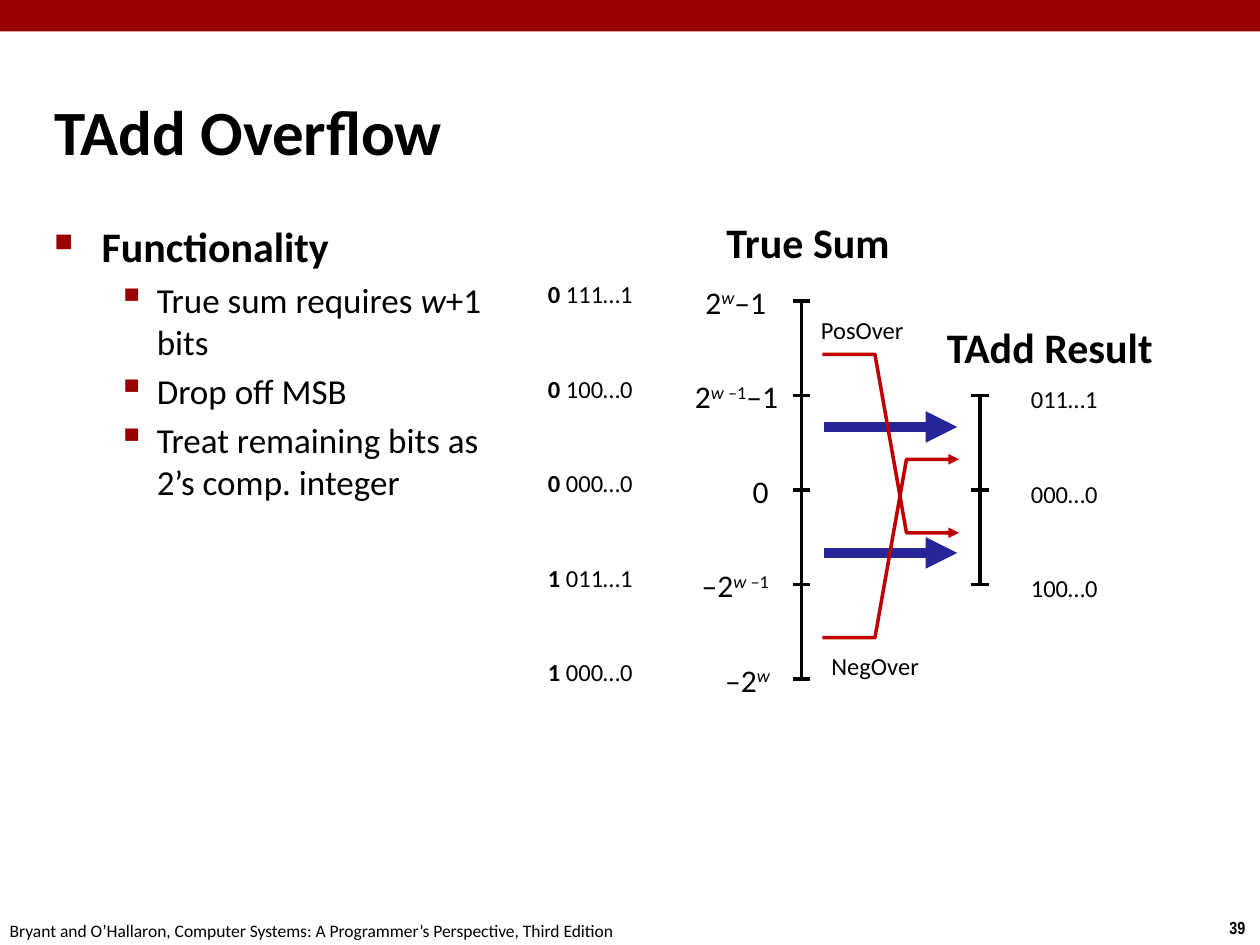
import pptx
import pptx.dml.color
import pptx.enum.shapes
import pptx.enum.text
import pptx.oxml.ns
import pptx.util
from lxml import etree

Pt = pptx.util.Pt
Align = pptx.enum.text.PP_ALIGN
Anchor = pptx.enum.text.MSO_ANCHOR

COLORS = {"black": "000000", "band": "990000", "blue": "262699", "red": "C00000"}


def add_xml(parent, tag, **attributes):
    return etree.SubElement(parent, pptx.oxml.ns.qn(tag), attributes)


class SlideBuilder:
    font = "Calibri"

    def __init__(self, slide):
        self.slide = slide

    def color(self, name):
        return pptx.dml.color.RGBColor.from_string(COLORS[name])

    def band(self, left, top, width, height):
        shape = self.slide.shapes.add_shape(
            pptx.enum.shapes.MSO_SHAPE.RECTANGLE, Pt(left), Pt(top), Pt(width), Pt(height))
        shape.shadow.inherit = False
        shape.fill.solid()
        shape.fill.fore_color.rgb = self.color("band")
        shape.line.fill.background()

    def add_runs(self, paragraph, runs, size, font=None):
        """Each run is (text, flags): b bold, i italic, ^ superscript."""
        for text, flags in runs:
            run = paragraph.add_run()
            run.text = text
            run.font.name = font or self.font
            run.font.size = Pt(size)
            run.font.bold = "b" in flags
            run.font.italic = "i" in flags
            run.font.color.rgb = self.color("black")
            if "^" in flags:
                run._r.get_or_add_rPr().set("baseline", "30000")

    def text_box(self, left, top, width, height, wrap=False):
        box = self.slide.shapes.add_textbox(Pt(left), Pt(top), Pt(width), Pt(height))
        frame = box.text_frame
        frame.word_wrap = wrap
        if not wrap:
            frame.auto_size = pptx.enum.text.MSO_AUTO_SIZE.SHAPE_TO_FIT_TEXT
        return frame

    def text(self, left, top, width, height, runs, size, align=Align.LEFT,
             wrap=False, anchor=Anchor.TOP, font=None):
        frame = self.text_box(left, top, width, height, wrap)
        frame.vertical_anchor = anchor
        paragraph = frame.paragraphs[0]
        paragraph.alignment = align
        self.add_runs(paragraph, runs, size, font)

    def bullets(self, left, top, width, height, items):
        frame = self.text_box(left, top, width, height, wrap=True)
        styles = [(24, 27, 27, "■", 60), (20, 58.5, 22.5, "▪", 110)]
        for index, (level, runs) in enumerate(items):
            size, margin, hanging, mark, percent = styles[level]
            paragraph = frame.paragraphs[0] if index == 0 else frame.add_paragraph()
            paragraph.level = level
            paragraph.space_before = Pt(size * 0.2)
            properties = paragraph._p.get_or_add_pPr()
            properties.set("marL", str(Pt(margin)))
            properties.set("indent", str(-Pt(hanging)))
            bullet_color = add_xml(properties, "a:buClr")
            add_xml(bullet_color, "a:srgbClr", val=COLORS["band"])
            add_xml(properties, "a:buSzPct", val=str(percent * 1000))
            add_xml(properties, "a:buChar", char=mark)
            self.add_runs(paragraph, runs, size)

    def style_line(self, shape, color, width, arrow):
        shape.line.color.rgb = self.color(color)
        shape.line.width = Pt(width)
        if arrow:
            add_xml(shape.line._get_or_add_ln(), "a:tailEnd", type="triangle")

    def line(self, x1, y1, x2, y2, color="black", width=2, arrow=False):
        connector = self.slide.shapes.add_connector(
            pptx.enum.shapes.MSO_CONNECTOR.STRAIGHT, Pt(x1), Pt(y1), Pt(x2), Pt(y2))
        self.style_line(connector, color, width, arrow)
        add_xml(connector._element.spPr, "a:effectLst")

    def bent_arrow(self, points, color):
        start, *others = [(Pt(x), Pt(y)) for x, y in points]
        builder = self.slide.shapes.build_freeform(*start)
        builder.add_line_segments(others, close=False)
        shape = builder.convert_to_shape()
        shape.shadow.inherit = False
        shape.fill.background()
        self.style_line(shape, color, 2, arrow=True)

    def axis(self, x, ticks):
        top, middle, bottom = ticks[0], ticks[len(ticks) // 2], ticks[-1]
        for start, end in ((top, middle), (middle, bottom)):
            self.line(x, start + 1, x, end - 1)
        for y in ticks:
            self.line(x - 5, y, x + 5, y)


def main():
    presentation = pptx.Presentation()
    presentation.slide_width, presentation.slide_height = Pt(720), Pt(540)
    builder = SlideBuilder(presentation.slides.add_slide(presentation.slide_layouts[6]))

    # Header band, footer and page number
    builder.band(0, 0, 720, 18)
    builder.text(695.5, 520.5, 24.5, 19.5, [("39", "b")], 10, font="Arial Narrow")
    builder.text(-1.5, 522, 366, 19.5, [(
        "Bryant and O’Hallaron, Computer Systems: A Programmer’s Perspective, Third Edition",
        "")], 10)

    # Title and bullet list
    builder.text(24, 52.5, 532, 44, [("TAdd Overflow", "b")], 36,
                 wrap=True, anchor=Anchor.MIDDLE)
    builder.bullets(24, 122.5, 260.5, 411, [
        (0, [("Functionality", "b")]),
        (1, [("True sum requires ", ""), ("w", "i"), ("+1 bits", "")]),
        (1, [("Drop off MSB", "")]),
        (1, [("Treat remaining bits as 2’s comp. integer", "")]),
    ])

    # Number axes on a common grid of levels
    step = 54
    levels = [172 + step * index for index in range(5)]
    builder.axis(458, levels)
    builder.axis(560, levels[1:4])

    # Values and bit patterns of the true sum
    values = [
        (396, 50.5, Align.LEFT, False, [("2", ""), ("w", "i^"), ("–1", "")]),
        (390, 74, Align.LEFT, True, [("2", ""), ("w ", "i^"), ("–1", "^"), ("–1", "")]),
        (423, 24, Align.LEFT, True, [("0", "")]),
        (390, 56.5, Align.RIGHT, False, [("–2", ""), ("w ", "i^"), ("–1", "^")]),
        (405, 42, Align.RIGHT, False, [("–2", ""), ("w", "i^")]),
    ]
    patterns = [("0", "111…1"), ("0", "100…0"), ("0", "000…0"),
                ("1", "011…1"), ("1", "000…0")]
    for y, (left, width, align, wrap, runs), (sign, bits) in zip(levels, values, patterns):
        builder.text(left, y - 14, width, 29, runs, 18, align, wrap)
        builder.text(306, y - 16, 63, 24, [(sign, "b"), (" " + bits, "")], 14)

    # Bit patterns of the result
    for y, bits in zip(levels[1:4], ["011…1", "000…0", "100…0"]):
        builder.text(582, y - 10, 52.5, 24, [(bits, "")], 14)

    # Values that are kept, then the overflow paths
    for y in (244, 316):
        builder.line(471, y, 547, y, "blue", 6, arrow=True)
    for start, end in ((202.5, 304.5), (364.5, 262.5)):
        builder.bent_arrow([(470, start), (500, start), (518, end), (548, end)], "red")

    # Headings and overflow labels
    builder.text(408, 120, 109, 36, [("True Sum", "b")], 24)
    builder.text(534, 180, 133, 36, [("TAdd Result", "b")], 24)
    builder.text(462, 176.5, 62, 24.5, [("PosOver", "")], 14)
    builder.text(468, 368.5, 65, 24.5, [("NegOver", "")], 14)

    presentation.save("out.pptx")


if __name__ == "__main__":
    main()
